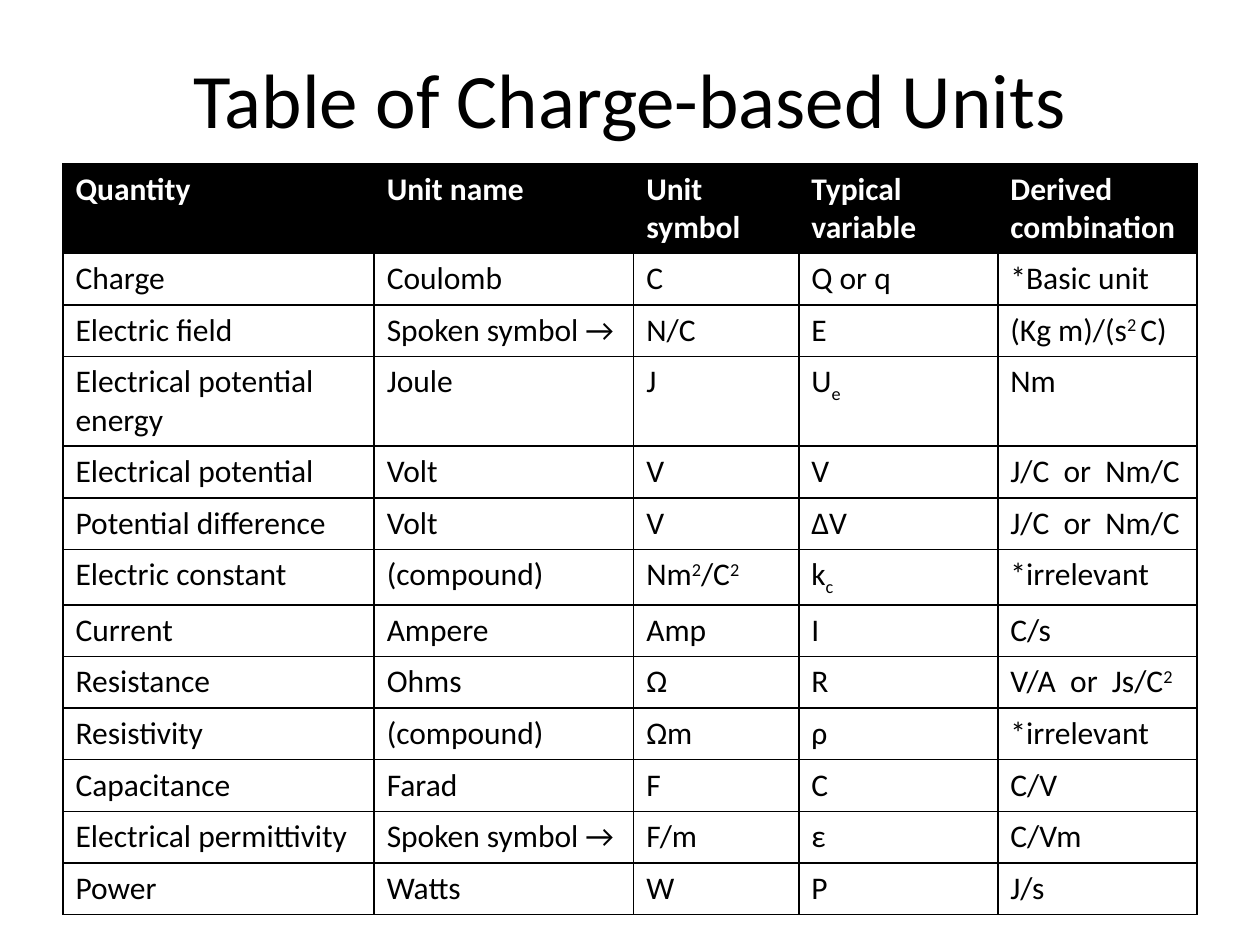
from lxml import etree
from pptx import Presentation
from pptx.dml.color import RGBColor
from pptx.enum import text
from pptx.oxml import ns
from pptx.util import Inches, Pt

COLORS = {"black": "000000", "white": "FFFFFF"}
FONT = "Calibri"
SUPERSCRIPT, SUBSCRIPT = 30000, -25000

TITLE = "Table of Charge-based Units"
HEADER = ("Quantity", "Unit name", "Unit symbol", "Typical variable", "Derived combination")
SQUARED = ("2", SUPERSCRIPT)
# A cell is a string, or a list of strings and (string, baseline) pairs.
UNITS = [
    ("Charge", "Coulomb", "C", "Q or q", "*Basic unit"),
    ("Electric field", "Spoken symbol →", "N/C", "E",
     ["(Kg m)/(s", ("2 ", SUPERSCRIPT), "C)"]),
    ("Electrical potential energy", "Joule", "J", ["U", ("e", SUBSCRIPT)], "Nm"),
    ("Electrical potential", "Volt", "V", "V", "J/C  or  Nm/C"),
    ("Potential difference", "Volt", "V", "ΔV", "J/C  or  Nm/C"),
    ("Electric constant", "(compound)", ["Nm", SQUARED, "/C", SQUARED],
     ["k", ("c", SUBSCRIPT)], "*irrelevant"),
    ("Current", "Ampere", "Amp", "I", "C/s"),
    ("Resistance", "Ohms", "Ω", "R", ["V/A  or  Js/C", SQUARED]),
    ("Resistivity", "(compound)", "Ωm", "ρ", "*irrelevant"),
    ("Capacitance", "Farad", "F", "C", "C/V"),
    ("Electrical permittivity", "Spoken symbol →", "F/m", "ε", "C/Vm"),
    ("Power", "Watts", "W", "P", "J/s"),
]
COLUMN_WIDTHS = (2.47, 2.06, 1.31, 1.58, 1.58)
ROW_HEIGHT = 0.41
HEADER_HEIGHT = 0.71


def rgb(name):
    return RGBColor.from_string(COLORS[name])


def add_run(paragraph, content, color, **font_values):
    run = paragraph.add_run()
    run.text = content
    for name, value in {"name": FONT, **font_values}.items():
        setattr(run.font, name, value)
    run.font.color.rgb = rgb(color)
    return run


def add_borders(cell):
    properties = cell._tc.get_or_add_tcPr()
    for index, side in enumerate(("lnL", "lnR", "lnT", "lnB")):
        line = etree.Element(ns.qn(f"a:{side}"), w=str(Pt(1)))
        fill = etree.SubElement(line, ns.qn("a:solidFill"))
        etree.SubElement(fill, ns.qn("a:srgbClr"), val=COLORS["black"])
        properties.insert(index, line)


def fill_cell(cell, content, is_header):
    cell.fill.solid()
    cell.fill.fore_color.rgb = rgb("black" if is_header else "white")
    add_borders(cell)
    parts = [content] if isinstance(content, str) else content
    for part in parts:
        words, baseline = (part, 0) if isinstance(part, str) else part
        run = add_run(cell.text_frame.paragraphs[0], words,
                      "white" if is_header else "black", size=Pt(18), bold=is_header)
        if baseline:
            run.font._element.set("baseline", str(baseline))


def add_title(slide):
    title = slide.shapes.title
    box = {"left": 0.5, "top": 0.3, "width": 9, "height": 0.95}
    for name, value in box.items():
        setattr(title, name, Inches(value))
    title.text_frame.vertical_anchor = text.MSO_ANCHOR.MIDDLE
    paragraph = title.text_frame.paragraphs[0]
    paragraph.alignment = text.PP_ALIGN.CENTER
    add_run(paragraph, TITLE, "black", size=Pt(44))


def add_unit_table(slide):
    rows = [HEADER, *UNITS]
    height = HEADER_HEIGHT + ROW_HEIGHT * len(UNITS)
    table = slide.shapes.add_table(
        len(rows), len(HEADER), Inches(0.5), Inches(1.3),
        Inches(sum(COLUMN_WIDTHS)), Inches(height)).table
    for column, width in zip(table.columns, COLUMN_WIDTHS):
        column.width = Inches(width)
    for index, row in enumerate(rows):
        table.rows[index].height = Inches(ROW_HEIGHT if index else HEADER_HEIGHT)
        for cell, content in zip(table.rows[index].cells, row):
            fill_cell(cell, content, is_header=index == 0)


def main():
    presentation = Presentation()
    presentation.slide_width, presentation.slide_height = Inches(10), Inches(7.5)
    slide = presentation.slides.add_slide(presentation.slide_layouts[5])
    add_title(slide)
    add_unit_table(slide)
    presentation.save("out.pptx")


if __name__ == "__main__":
    main()
